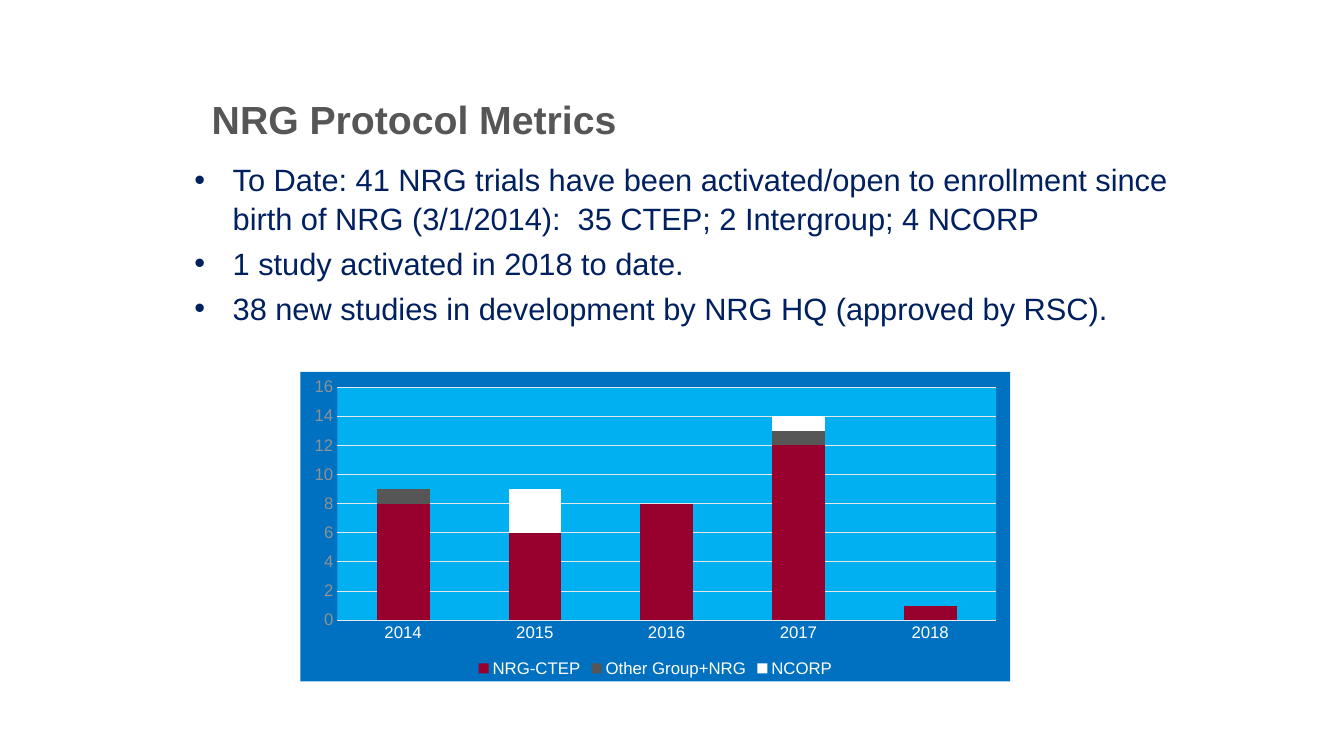
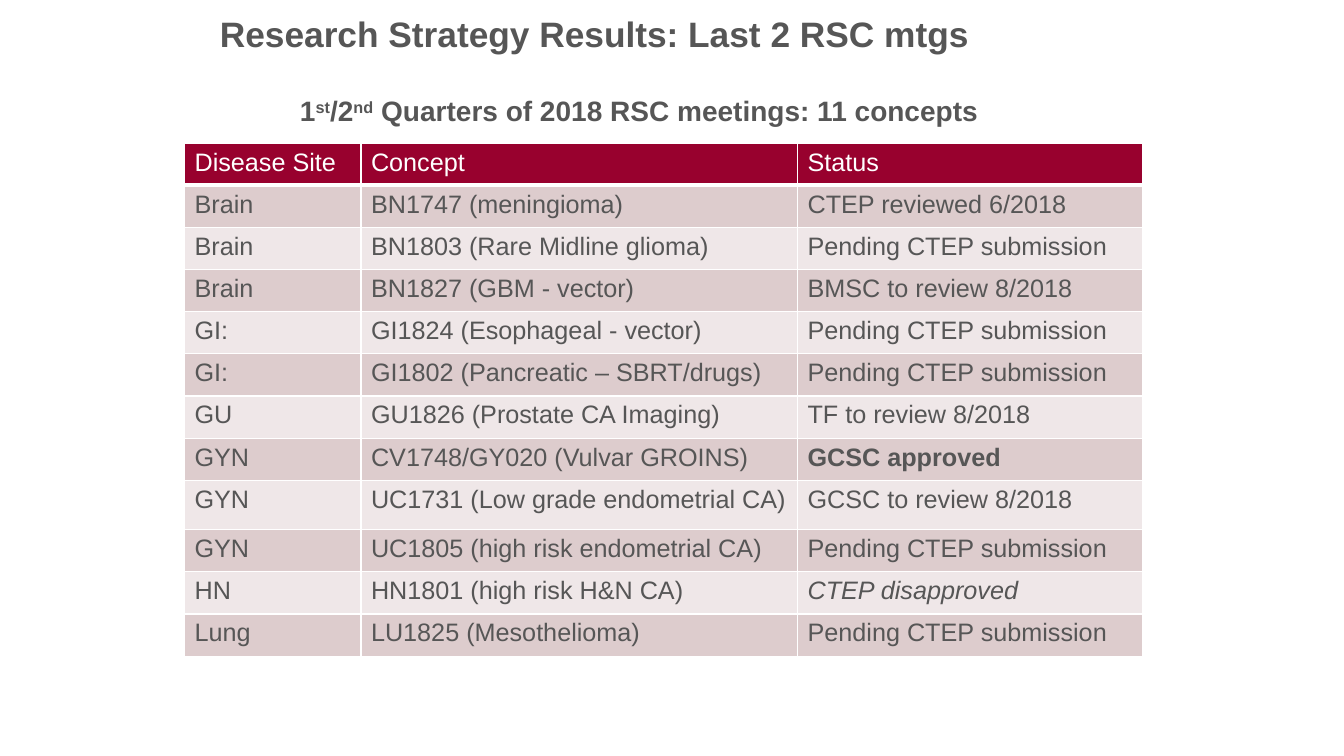
from lxml import etree
from pptx import Presentation
from pptx.chart import data
from pptx.dml.color import RGBColor
from pptx.enum import chart as charts, text
from pptx.oxml import ns, parse_xml
from pptx.util import Inches, Pt

FONT = "Arial"
GRAY = RGBColor(0x56, 0x56, 0x56)
AXIS_GRAY = RGBColor(0x91, 0x91, 0x91)
GRID_GRAY = RGBColor(0xE6, 0xE6, 0xE6)
NAVY = RGBColor(0x00, 0x20, 0x60)
BLUE = RGBColor(0x00, 0x70, 0xC0)
SKY = RGBColor(0x00, 0xB0, 0xF0)
CRIMSON = RGBColor(0x98, 0x01, 0x2E)
WHITE = RGBColor(0xFF, 0xFF, 0xFF)
BANDS = (RGBColor(0xDD, 0xCC, 0xCD), RGBColor(0xEF, 0xE7, 0xE8))


def style_font(font, size, color, bold=False, italic=False):
    font.name = FONT
    font.size = Pt(size)
    font.bold = bold
    font.italic = italic
    font.color.rgb = color


def area_fill(color):
    return parse_xml(
        f'<c:spPr {ns.nsdecls("c", "a")}><a:solidFill><a:srgbClr val="{color}"/></a:solidFill>'
        "<a:ln><a:noFill/></a:ln></c:spPr>"
    )


def set_borders(cell, bottom):
    properties = cell._tc.get_or_add_tcPr()
    for side, width in (("L", 1), ("R", 1), ("T", 1), ("B", bottom)):
        line = etree.SubElement(properties, ns.qn(f"a:ln{side}"), w=str(Pt(width)))
        fill = etree.SubElement(line, ns.qn("a:solidFill"))
        etree.SubElement(fill, ns.qn("a:srgbClr"), val=str(WHITE))


class Deck:
    def __init__(self):
        self.presentation = Presentation()
        self.presentation.slide_width = Inches(13.33)
        self.presentation.slide_height = Inches(7.5)
        self.slide = None

    def add_slide(self, heading, left, top, height, size):
        self.slide = self.presentation.slides.add_slide(self.presentation.slide_layouts[5])
        title = self.slide.shapes.title
        title.left, title.top = Inches(left), Inches(top)
        title.width, title.height = Inches(9), Inches(height)
        frame = title.text_frame
        frame.text = heading
        frame.vertical_anchor = text.MSO_ANCHOR.MIDDLE
        frame.auto_size = text.MSO_AUTO_SIZE.NONE
        paragraph = frame.paragraphs[0]
        paragraph.alignment = text.PP_ALIGN.LEFT
        style_font(paragraph.font, size, GRAY, bold=True)

    def add_text_frame(self, left, top, width, height):
        box = self.slide.shapes.add_textbox(Inches(left), Inches(top), Inches(width), Inches(height))
        box.text_frame.word_wrap = True
        return box.text_frame

    def add_bullets(self, items, left, top, width, height):
        frame = self.add_text_frame(left, top, width, height)
        for index, item in enumerate(items):
            paragraph = frame.add_paragraph() if index else frame.paragraphs[0]
            paragraph.text = item
            paragraph.line_spacing = 1.05
            if index:
                paragraph.space_before = Pt(4.4)
            properties = paragraph._p.get_or_add_pPr()
            properties.set("marL", str(Inches(0.38)))
            properties.set("indent", str(-Inches(0.38)))
            etree.SubElement(properties, ns.qn("a:buFont"), typeface=FONT)
            etree.SubElement(properties, ns.qn("a:buChar"), char="•")
            style_font(paragraph.font, 22, NAVY)

    def add_subtitle(self, pieces, left, top, width, height):
        paragraph = self.add_text_frame(left, top, width, height).paragraphs[0]
        paragraph.alignment = text.PP_ALIGN.CENTER
        style_font(paragraph.font, 20, GRAY, bold=True)
        for piece, raised in pieces:
            run = paragraph.add_run()
            run.text = piece
            if raised:
                run._r.get_or_add_rPr().set("baseline", "30000")

    def add_stacked_chart(self, years, trials, left, top, width, height):
        chart_data = data.CategoryChartData(number_format="0")
        chart_data.categories = years
        for name, counts, _ in trials:
            chart_data.add_series(name, counts)
        chart = self.slide.shapes.add_chart(
            charts.XL_CHART_TYPE.COLUMN_STACKED,
            Inches(left), Inches(top), Inches(width), Inches(height), chart_data,
        ).chart
        style_font(chart.font, 10, GRAY)
        chart.has_title = False
        chart.has_legend = True
        chart.legend.position = charts.XL_LEGEND_POSITION.BOTTOM
        chart.legend.include_in_layout = False
        style_font(chart.legend.font, 12, WHITE)

        plot = chart.plots[0]
        plot.gap_width = 150
        plot.overlap = 100
        plot.vary_by_categories = False
        for series, (_, _, color) in zip(plot.series, trials):
            series.format.fill.solid()
            series.format.fill.fore_color.rgb = color

        for axis, color in ((chart.category_axis, WHITE), (chart.value_axis, AXIS_GRAY)):
            axis.major_tick_mark = charts.XL_TICK_MARK.NONE
            axis.minor_tick_mark = charts.XL_TICK_MARK.NONE
            axis.format.line.fill.background()
            style_font(axis.tick_labels.font, 12, color)
        counts_axis = chart.value_axis
        counts_axis.minimum_scale = 0
        counts_axis.maximum_scale = 16
        counts_axis.major_unit = 2
        grid = counts_axis.major_gridlines.format.line
        grid.width = Pt(0.75)
        grid.color.rgb = GRID_GRAY

        chart_root = chart._chartSpace.find(ns.qn("c:chart"))
        chart_root.find(ns.qn("c:plotArea")).append(area_fill(SKY))
        chart_root.addnext(area_fill(BLUE))

    def add_table(self, rows, widths, heights, left, top, emphasis):
        table = self.slide.shapes.add_table(
            len(rows), len(widths), Inches(left), Inches(top),
            Inches(sum(widths)), Inches(sum(heights)),
        ).table
        table.first_row = False
        table.horz_banding = False
        for column, width in zip(table.columns, widths):
            column.width = Inches(width)
        for index, (row, values) in enumerate(zip(table.rows, rows)):
            row.height = Inches(heights[index])
            header = index == 0
            for cell, value in zip(row.cells, values):
                cell.text = value
                set_borders(cell, 3 if header else 1)
                cell.fill.solid()
                cell.fill.fore_color.rgb = CRIMSON if header else BANDS[(index - 1) % 2]
                style_font(cell.text_frame.paragraphs[0].font, 18,
                           WHITE if header else GRAY, **emphasis.get(value, {}))


def main():
    deck = Deck()

    deck.add_slide("NRG Protocol Metrics", 2, 0.83, 0.7, 28)
    deck.add_bullets(
        (
            "To Date: 41 NRG trials have been activated/open to enrollment since "
            "birth of NRG (3/1/2014):  35 CTEP; 2 Intergroup; 4 NCORP",
            "1 study activated in 2018 to date.",
            "38 new studies in development by NRG HQ (approved by RSC).",
        ),
        1.83, 1.53, 10, 1.72,
    )
    trials = (
        ("NRG-CTEP", (8, 6, 8, 12, 1), CRIMSON),
        ("Other Group+NRG", (1, 0, 0, 1, 0), GRAY),
        ("NCORP", (0, 3, 0, 1, 0), WHITE),
    )
    years = [str(year) for year in range(2014, 2019)]
    deck.add_stacked_chart(years, trials, 2.98, 3.69, 7.04, 3.07)

    deck.add_slide("Research Strategy Results: Last 2 RSC mtgs", 2.08, 0.08, 0.5, 25.2)
    pending = "Pending CTEP submission"
    concepts = (
        ("Disease Site", "Concept", "Status"),
        ("Brain", "BN1747 (meningioma)", "CTEP reviewed 6/2018"),
        ("Brain", "BN1803 (Rare Midline glioma)", pending),
        ("Brain", "BN1827 (GBM - vector)", "BMSC to review 8/2018"),
        ("GI:", "GI1824 (Esophageal - vector)", pending),
        ("GI:", "GI1802 (Pancreatic – SBRT/drugs)", pending),
        ("GU", "GU1826 (Prostate CA Imaging)", "TF to review 8/2018"),
        ("GYN", "CV1748/GY020 (Vulvar GROINS)", "GCSC approved"),
        ("GYN", "UC1731 (Low grade endometrial CA)", "GCSC to review 8/2018"),
        ("GYN", "UC1805 (high risk endometrial CA)", pending),
        ("HN", "HN1801 (high risk H&N CA)", "CTEP disapproved"),
        ("Lung", "LU1825 (Mesothelioma)", pending),
    )
    tall_height = 0.49
    row_height = (5.09 - tall_height) / (len(concepts) - 1)
    heights = [tall_height if "UC1731" in concept else row_height for _, concept, _ in concepts]
    emphasis = {"GCSC approved": {"bold": True}, "CTEP disapproved": {"italic": True}}
    deck.add_table(concepts, (1.75, 4.33, 3.42), heights, 1.83, 1.42, emphasis)
    deck.add_subtitle(
        (
            ("1", False), ("st", True), ("/2", False), ("nd", True),
            (" Quarters of 2018 RSC meetings: 11 concepts", False),
        ),
        1.84, 0.88, 9, 0.42,
    )

    deck.presentation.save("out.pptx")


if __name__ == "__main__":
    main()
